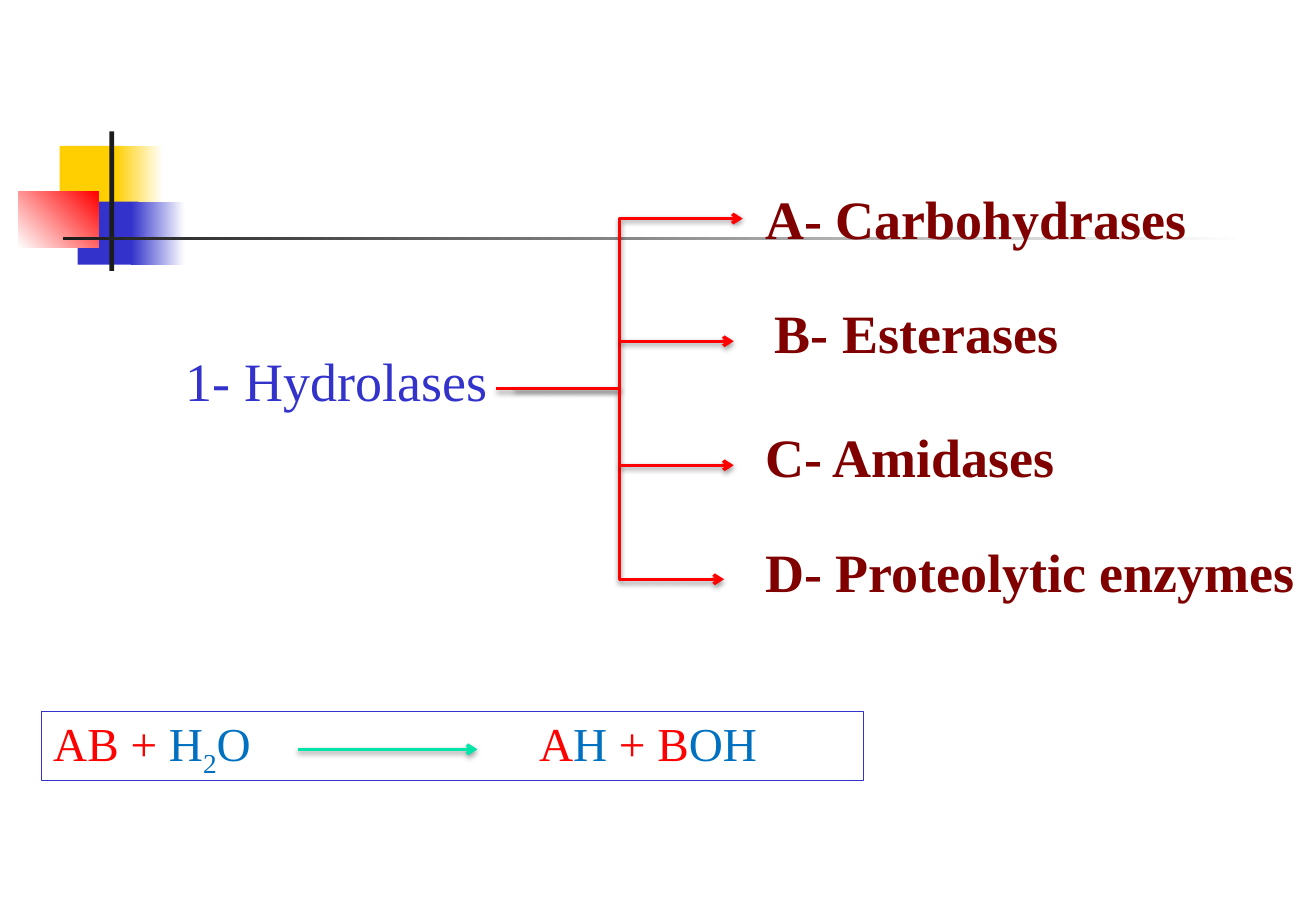
from lxml import etree
from pptx import Presentation
from pptx.dml.color import RGBColor
from pptx.enum.shapes import MSO_CONNECTOR, MSO_SHAPE
from pptx.enum.text import MSO_ANCHOR, MSO_AUTO_SIZE, PP_ALIGN
from pptx.oxml import parse_xml
from pptx.oxml.ns import qn
from pptx.util import Pt

RECTANGLE = MSO_SHAPE.RECTANGLE
STRAIGHT, ELBOW = MSO_CONNECTOR.STRAIGHT, MSO_CONNECTOR.ELBOW
TOP, MIDDLE = MSO_ANCHOR.TOP, MSO_ANCHOR.MIDDLE
LEFT = PP_ALIGN.LEFT
GROW = MSO_AUTO_SIZE.SHAPE_TO_FIT_TEXT

WHITE = RGBColor(0xFF, 0xFF, 0xFF)
YELLOW = RGBColor(0xFF, 0xCF, 0x01)
INDIGO = RGBColor(0x33, 0x33, 0xCC)
RED = RGBColor(0xFF, 0x00, 0x00)
CHARCOAL = RGBColor(0x1C, 0x1C, 0x1C)
BLUE = RGBColor(0x00, 0x70, 0xC0)
MAROON = RGBColor(0x80, 0x00, 0x00)
GREEN = RGBColor(0x00, 0xE4, 0xA8)

FONT = "Times New Roman"
SPINE_X = 367.2
TRUNK_Y = 230.4
CLASS_X = 446.4
REACTION_TABS = (144, 216, 288)

SHADOW = (
    '<a:effectLst xmlns:a="http://schemas.openxmlformats.org/drawingml/2006/main">'
    '<a:outerShdw blurRad="40000" dist="20000" dir="5400000" rotWithShape="0">'
    '<a:srgbClr val="000000"><a:alpha val="38000"/></a:srgbClr>'
    "</a:outerShdw></a:effectLst>"
)


def add_block(slide, box, start, end=None, angle=0):
    block = slide.shapes.add_shape(RECTANGLE, *map(Pt, box))
    block.shadow.inherit = False
    block.line.fill.background()
    if end is None:
        block.fill.solid()
        block.fill.fore_color.rgb = start
        return
    block.fill.gradient()
    block.fill.gradient_angle = angle
    for stop, color in zip(block.fill.gradient_stops, (start, end)):
        stop.color.rgb = color


def write_runs(holder, runs, size, anchor, bold=False):
    frame = holder.text_frame
    frame.word_wrap = True
    frame.auto_size = GROW
    frame.vertical_anchor = anchor
    paragraph = frame.paragraphs[0]
    paragraph.alignment = LEFT
    for text, color, baseline in runs:
        run = paragraph.add_run()
        run.text = text
        run.font.name = FONT
        run.font.size = Pt(size)
        run.font.bold = bold
        run.font.color.rgb = color
        if baseline:
            run.font._element.set("baseline", str(baseline))


def set_tab_stops(paragraph, positions):
    stops = etree.SubElement(paragraph._p.get_or_add_pPr(), qn("a:tabLst"))
    for position in positions:
        etree.SubElement(stops, qn("a:tab"), pos=str(Pt(position)), algn="l")


def add_label(slide, box, text, color, anchor=TOP, bold=False):
    label = slide.shapes.add_textbox(*map(Pt, box))
    write_runs(label, [(text, color, 0)], 32, anchor, bold)


def add_arrow(slide, kind, begin, end, color):
    arrow = slide.shapes.add_connector(kind, *map(Pt, begin + end))
    arrow.line.color.rgb = color
    arrow.line.width = Pt(2)
    etree.SubElement(arrow.line._get_or_add_ln(), qn("a:tailEnd"), type="arrow")
    arrow._element.spPr.append(parse_xml(SHADOW))


def add_reaction(slide):
    equation = slide.shapes.add_shape(RECTANGLE, Pt(24.5), Pt(421.9), Pt(487.4), Pt(41))
    equation.shadow.inherit = False
    equation.fill.background()
    equation.line.color.rgb = INDIGO
    equation.line.width = Pt(0.75)
    runs = [
        ("AB + ", RED, 0),
        ("H", BLUE, 0),
        ("2", BLUE, -25000),
        ("O\t\t\t", BLUE, 0),
        ("A", RED, 0),
        ("H", BLUE, 0),
        (" + B", RED, 0),
        ("OH", BLUE, 0),
    ]
    write_runs(equation, runs, 28, MIDDLE)
    set_tab_stops(equation.text_frame.paragraphs[0], REACTION_TABS)
    add_arrow(slide, STRAIGHT, (176.4, 444.2), (283, 444.2), GREEN)


def add_ornament(slide):
    add_block(slide, (35.3, 86.4, 37.4, 37.4), YELLOW)
    add_block(slide, (68.4, 86.4, 28.1, 37.4), YELLOW, WHITE)
    add_block(slide, (46.1, 119.5, 36, 37.4), INDIGO)
    add_block(slide, (77.8, 119.5, 31.7, 37.4), INDIGO, WHITE)
    add_block(slide, (10.8, 113.8, 47.5, 33.1), WHITE, RED, 45)
    add_block(slide, (64.8, 77.8, 2.9, 82.8), CHARCOAL)
    add_block(slide, (37.4, 140.4, 702, 2.2), CHARCOAL, WHITE)


def add_classification(slide):
    add_label(slide, (103, 202.3, 209.5, 45.4), "1- Hydrolases", INDIGO, MIDDLE)
    for half_width, y in ((73, 129.6), (62, 343.4)):
        add_arrow(slide, ELBOW, (SPINE_X - half_width, TRUNK_Y), (SPINE_X + half_width, y), RED)
    for y in (202.3, 275.8):
        add_arrow(slide, STRAIGHT, (SPINE_X, y), (434.9, y), RED)
    classes = [
        ("A- Carbohydrases", CLASS_X, 106.6, 298),
        ("B- Esterases", CLASS_X + 5.8, 174.2, 242),
        ("C- Amidases", CLASS_X, 247.7, 242),
        ("D- Proteolytic enzymes", CLASS_X, 315.4, 393.8),
    ]
    for name, x, y, width in classes:
        add_label(slide, (x, y, width, 46), name, MAROON, bold=True)


def main():
    deck = Presentation()
    deck.slide_width, deck.slide_height = Pt(780), Pt(540)
    slide = deck.slides.add_slide(deck.slide_layouts[6])
    add_ornament(slide)
    add_reaction(slide)
    add_classification(slide)
    deck.save("out.pptx")


if __name__ == "__main__":
    main()
